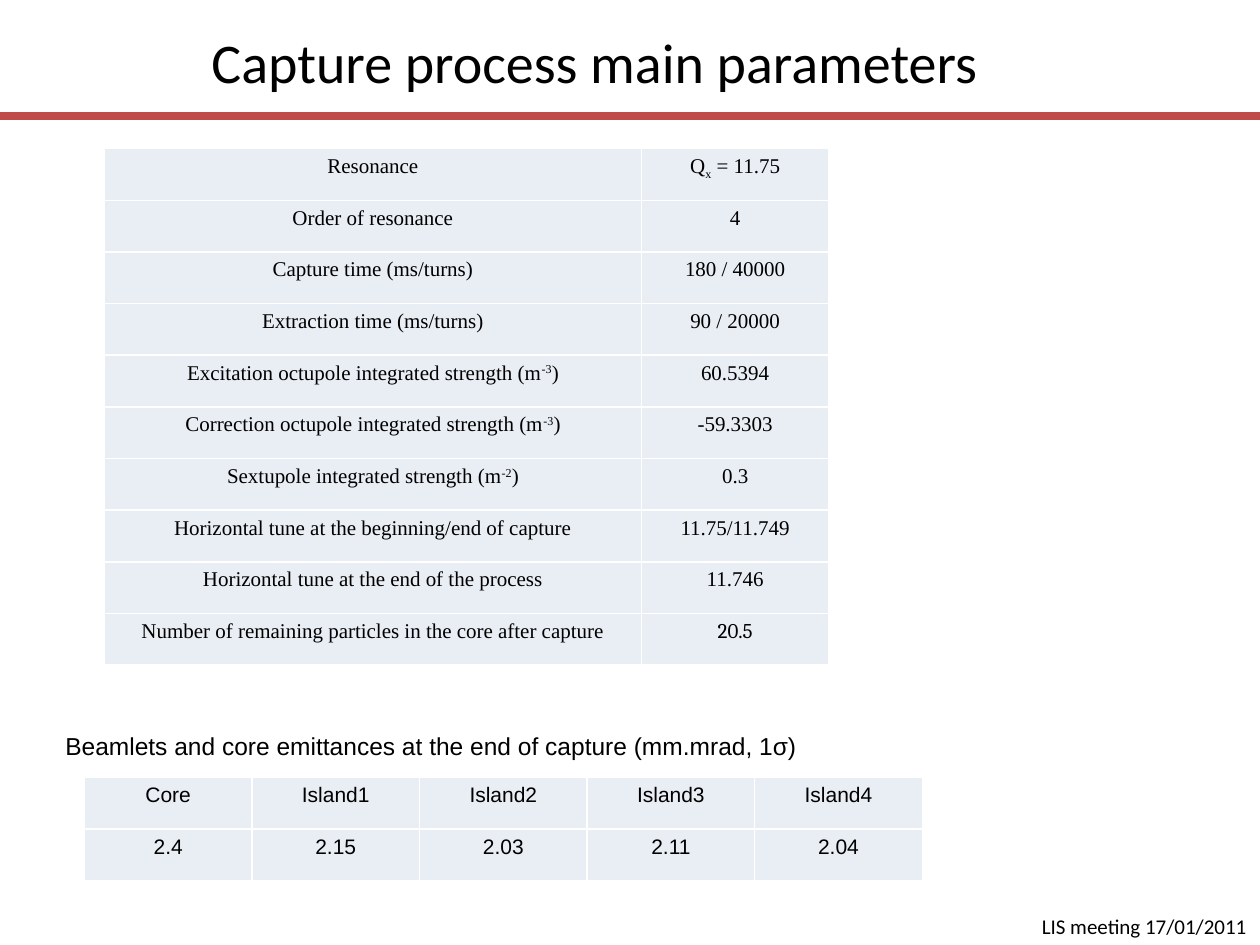
from dataclasses import dataclass

from pptx import Presentation, util as u
from pptx.dml.color import RGBColor
from pptx.enum import shapes, text
from pptx.oxml import parse_xml
from pptx.oxml.ns import nsdecls

BLACK, WHITE, RED, PALE = "000000", "FFFFFF", "BF4C48", "E9EDF4"
ROW = 0.41


@dataclass(frozen=True)
class Run:
    text: str
    base: int = 0
    font: str = ""


@dataclass(frozen=True)
class Label:
    text: str
    left: float
    top: float
    width: float
    height: float
    size: int
    font: str


@dataclass(frozen=True)
class Grid:
    left: float
    top: float
    cols: list[float]
    rows: list[tuple]
    font: str
    inset: float = 0.1
    before: int = 0


def color(code: str) -> RGBColor:
    return RGBColor.from_string(code)


def add_run(para, run: Run, size: int, font: str) -> None:
    item = para.add_run()
    item.text = run.text
    item.font.size = u.Pt(size)
    item.font.name = run.font or font
    item.font.color.rgb = color(BLACK)
    if run.base:
        item._r.get_or_add_rPr().set("baseline", str(run.base * 1000))


def add_label(slide, label: Label) -> None:
    place = (u.Inches(n) for n in (label.left, label.top, label.width, label.height))
    frame = slide.shapes.add_textbox(*place).text_frame
    frame.word_wrap = False
    frame.auto_size = text.MSO_AUTO_SIZE.SHAPE_TO_FIT_TEXT
    add_run(frame.paragraphs[0], Run(label.text), label.size, label.font)


def add_edges(cell) -> None:
    props = cell._tc.get_or_add_tcPr()
    for side in "LRTB":
        props.append(parse_xml(
            f'<a:ln{side} {nsdecls("a")} w="{u.Pt(1)}"><a:solidFill>'
            f'<a:srgbClr val="{WHITE}"/></a:solidFill></a:ln{side}>'))


def fill_cell(cell, runs: list[Run], grid: Grid) -> None:
    add_edges(cell)
    cell.fill.solid()
    cell.fill.fore_color.rgb = color(PALE)
    cell.margin_left = cell.margin_right = u.Inches(grid.inset)
    para = cell.text_frame.paragraphs[0]
    para.alignment = text.PP_ALIGN.CENTER
    if grid.before:
        para.space_before = u.Pt(grid.before)
    for run in runs:
        add_run(para, run, 12, grid.font)


def add_grid(slide, grid: Grid) -> None:
    count = len(grid.rows)
    table = slide.shapes.add_table(
        count, len(grid.cols), u.Inches(grid.left), u.Inches(grid.top),
        u.Inches(sum(grid.cols)), u.Inches(ROW * count)).table
    table.first_row = table.horz_banding = False
    for col, width in zip(table.columns, grid.cols):
        col.width = u.Inches(width)
    for y, row in enumerate(grid.rows):
        table.rows[y].height = u.Inches(ROW)
        for x, entry in enumerate(row):
            runs = [Run(entry)] if isinstance(entry, str) else entry
            fill_cell(table.cell(y, x), runs, grid)


def add_rule(slide) -> None:
    y = u.Inches(0.92)
    rule = slide.shapes.add_connector(
        shapes.MSO_CONNECTOR.STRAIGHT, 0, y, u.Inches(10), y)
    rule.line.color.rgb = color(RED)
    rule.line.width = u.Pt(5)
    rule._element.spPr.append(parse_xml(f'<a:effectLst {nsdecls("a")}/>'))


def power(name: str, value: str) -> list[Run]:
    return [Run(f"{name} integrated strength (m"), Run(value, 30), Run(")")]


LABELS = [
    Label("Capture process main parameters", 1.58, 0.17, 6.34, 0.64, 32, "Calibri"),
    Label("Beamlets and core emittances at the end of capture (mm.mrad, 1σ)",
          0.42, 5.75, 6.03, 0.34, 14, "Arial"),
    Label("LIS meeting 17/01/2011", 8.17, 7.2, 1.85, 0.3, 12, "Calibri"),
]

GRIDS = [
    Grid(0.67, 6.17, [1.33] * 5, [
        ("Core", "Island1", "Island2", "Island3", "Island4"),
        ("2.4", "2.15", "2.03", "2.11", "2.04"),
    ], "Arial"),
    Grid(0.83, 1.18, [4.26, 1.49], [
        ("Resonance", [Run("Q"), Run("x", -25), Run(" = 11.75")]),
        ("Order of resonance", "4"),
        ("Capture time (ms/turns)", "180 / 40000"),
        ("Extraction time (ms/turns)", "90 / 20000"),
        (power("Excitation octupole", "-3"), "60.5394"),
        (power("Correction octupole", "-3"), "-59.3303"),
        (power("Sextupole", "-2"), "0.3"),
        ("Horizontal tune at the beginning/end of capture", "11.75/11.749"),
        ("Horizontal tune at the end of the process", "11.746"),
        ("Number of remaining particles in the core after capture",
         [Run("20.5", font="Cambria")]),
    ], "Times New Roman", 0.07, 12),
]


def main() -> None:
    deck = Presentation()
    deck.slide_width, deck.slide_height = u.Inches(10), u.Inches(7.5)
    slide = deck.slides.add_slide(deck.slide_layouts[6])
    add_rule(slide)
    for grid in GRIDS:
        add_grid(slide, grid)
    for label in LABELS:
        add_label(slide, label)
    deck.save("out.pptx")


if __name__ == "__main__":
    main()
